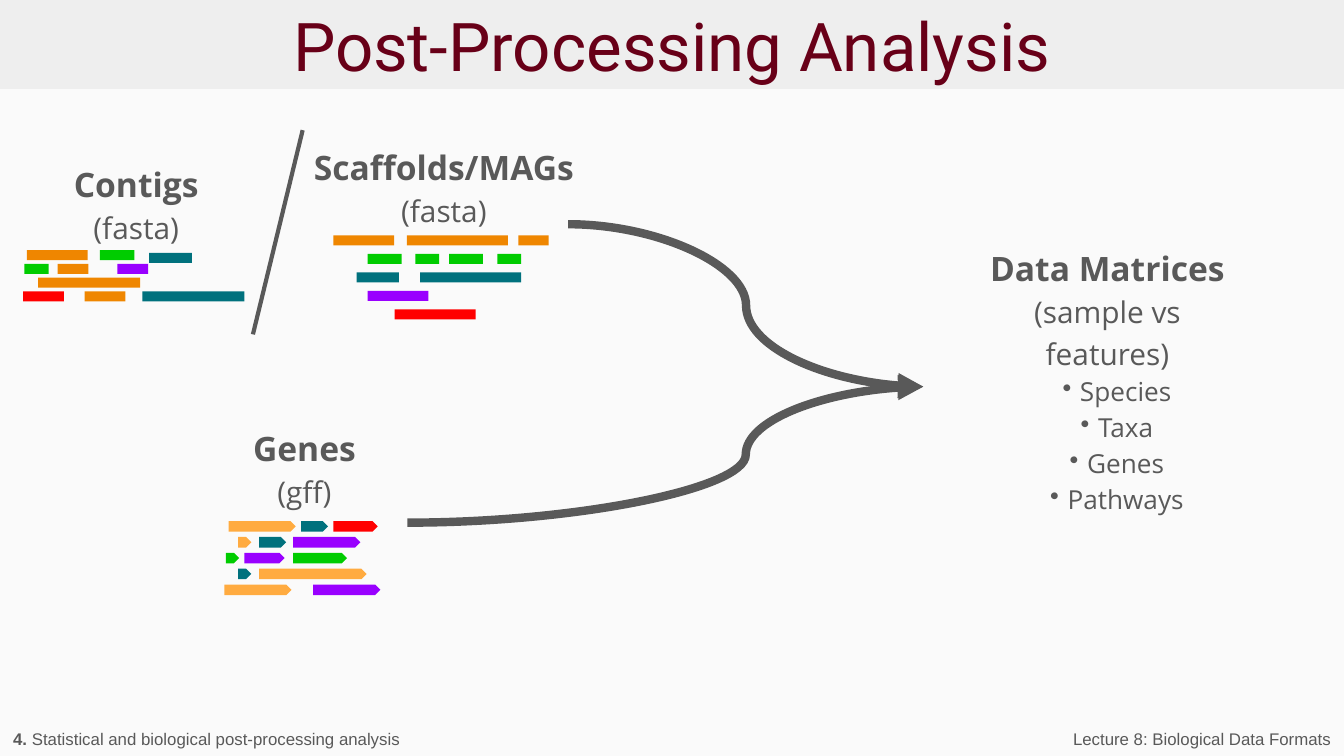
from dataclasses import dataclass

from lxml.etree import SubElement
from pptx import Presentation
from pptx.dml.color import RGBColor
from pptx.enum.shapes import MSO_CONNECTOR as Connector, MSO_SHAPE as Preset
from pptx.enum.text import MSO_ANCHOR as Anchor, PP_ALIGN as Align
from pptx.oxml.ns import qn
from pptx.util import Cm, Pt

GREY, MAROON = "595959", "680018"
ORANGE, AMBER, GREEN = "EF8600", "FFAB40", "00CC00"
TEAL, PURPLE, RED = "00717D", "9900FF", "FF0000"
WIDTH, HEIGHT = 25.4, 14.29


@dataclass
class Bar:
    left: float
    width: float
    color: str
    drop: float = 0


@dataclass
class Sequences:
    """A heading box (left, top, width) above evenly spaced rows of bars."""
    name: str
    file_format: str
    box: tuple[float, float, float]
    preset: Preset
    top: float
    pitch: float
    thickness: float
    rows: list[list[Bar]]


@dataclass
class Line:
    text: str
    size: float
    bold: bool = False
    bullet: bool = False


CONTIGS = Sequences("Contigs", "(fasta)", (0.25, 3.07, 4.55), Preset.RECTANGLE, 4.73, 0.26, 0.19, [
    [Bar(0.51, 1.15, ORANGE), Bar(1.89, 0.65, GREEN), Bar(2.82, 0.81, TEAL, 0.05)],
    [Bar(0.46, 0.46, GREEN), Bar(1.09, 0.58, ORANGE), Bar(2.22, 0.58, PURPLE)],
    [Bar(0.72, 1.93, ORANGE)],
    [Bar(0.44, 0.77, RED), Bar(1.6, 0.77, ORANGE), Bar(2.69, 1.93, TEAL)],
])
SCAFFOLDS = Sequences("Scaffolds/MAGs", "(fasta)", (5.51, 2.74, 5.66), Preset.RECTANGLE, 4.45, 0.35, 0.19, [
    [Bar(6.3, 1.15, ORANGE), Bar(7.69, 1.91, ORANGE), Bar(9.8, 0.57, ORANGE)],
    [Bar(6.95, 0.64, GREEN), Bar(7.85, 0.45, GREEN), Bar(8.49, 0.64, GREEN), Bar(9.4, 0.45, GREEN)],
    [Bar(6.74, 0.8, TEAL), Bar(7.94, 1.91, TEAL)],
    [Bar(6.95, 1.15, PURPLE)],
    [Bar(7.46, 1.53, RED)],
])
GENES = Sequences("Genes", "(gff)", (3.43, 8.05, 4.55), Preset.PENTAGON, 9.85, 0.3, 0.2, [
    [Bar(4.32, 1.27, AMBER), Bar(5.69, 0.51, TEAL), Bar(6.3, 0.84, RED)],
    [Bar(4.5, 0.25, AMBER), Bar(4.9, 0.51, TEAL), Bar(5.54, 1.27, PURPLE)],
    [Bar(4.27, 0.25, GREEN), Bar(4.62, 0.76, PURPLE), Bar(5.54, 1.02, GREEN)],
    [Bar(4.5, 0.25, TEAL), Bar(4.9, 2.03, AMBER)],
    [Bar(4.24, 1.27, AMBER), Bar(5.92, 1.27, PURPLE)],
])
MATRICES = [
    Line("Data Matrices", 18, bold=True),
    Line("(sample vs features)", 16),
    *(Line(feature, 14, bullet=True) for feature in ("Species", "Taxa", "Genes", "Pathways")),
]


def rgb(color: str) -> RGBColor:
    return RGBColor.from_string(color)


def set_font(font, name: str, size: float, color: str) -> None:
    font.name, font.size = name, Pt(size)
    font.color.rgb = rgb(color)


def set_frame(frame, anchor: Anchor, vertical_inset: float) -> None:
    frame.word_wrap = True
    frame.vertical_anchor = anchor
    frame.margin_left = frame.margin_right = Cm(0.25)
    frame.margin_top = frame.margin_bottom = Cm(vertical_inset)


def add_filled(slide, preset: Preset, left: float, top: float, width: float, height: float, color: str):
    shape = slide.shapes.add_shape(preset, Cm(left), Cm(top), Cm(width), Cm(height))
    shape.shadow.inherit = False
    shape.fill.solid()
    shape.fill.fore_color.rgb = rgb(color)
    shape.line.fill.background()
    return shape


def add_lines(slide, left: float, top: float, width: float, height: float, lines: list[Line]) -> None:
    frame = slide.shapes.add_textbox(Cm(left), Cm(top), Cm(width), Cm(height)).text_frame
    set_frame(frame, Anchor.MIDDLE, 0.25)
    for index, line in enumerate(lines):
        paragraph = frame.add_paragraph() if index else frame.paragraphs[0]
        paragraph.text = line.text
        paragraph.alignment = Align.CENTER
        paragraph.line_spacing = 1.15
        properties = paragraph._p.get_or_add_pPr()
        properties.set("marL", str(Cm(0.79 if line.bullet else 0.1)))
        properties.set("indent", str(Cm(-0.33 if line.bullet else 0)))
        if line.bullet:
            bullet_color = SubElement(properties, qn("a:buClr"))
            SubElement(bullet_color, qn("a:srgbClr"), val=GREY)
            SubElement(properties, qn("a:buChar"), char="•")
        set_font(paragraph.font, "Open Sans", line.size, GREY)
        paragraph.font.bold = line.bold


def add_sequences(slide, group: Sequences) -> None:
    add_lines(slide, *group.box, 1.5, [Line(group.name, 18, bold=True), Line(group.file_format, 16)])
    for index, row in enumerate(group.rows):
        for bar in row:
            top = group.top + index * group.pitch + bar.drop
            add_filled(slide, group.preset, bar.left, top, bar.width, group.thickness, bar.color)


def add_line(slide, kind: Connector, start: tuple[float, float], end: tuple[float, float], weight: float):
    line = slide.shapes.add_connector(kind, *(Cm(length) for length in (*start, *end)))
    line.line.color.rgb = rgb(GREY)
    line.line.width = Pt(weight)
    SubElement(line._element.spPr, qn("a:effectLst"))
    return line


def add_curve(slide, tip: tuple[float, float], tail: tuple[float, float], bend_x: float) -> None:
    """A curve that turns at bend_x, with its arrowhead at the tip."""
    curve = add_line(slide, Connector.CURVE, tip, tail, 4.5)
    SubElement(curve.line._get_or_add_ln(), qn("a:headEnd"), type="triangle")
    bend = round((tip[0] - bend_x) / (tip[0] - tail[0]) * 100000)
    guides = curve._element.spPr.find(qn("a:prstGeom")).get_or_add_avLst()
    SubElement(guides, qn("a:gd"), name="adj1", fmla=f"val {bend}")


def add_footer(slide, left: float, width: float, align: Align, runs: list[tuple[str, bool]]) -> None:
    frame = slide.shapes.add_textbox(Cm(left), Cm(13.66), Cm(width), Cm(0.63)).text_frame
    set_frame(frame, Anchor.BOTTOM, 0.13)
    paragraph = frame.paragraphs[0]
    paragraph.alignment = align
    set_font(paragraph.font, "Arial", 9, GREY)
    for text, bold in runs:
        run = paragraph.add_run()
        run.text, run.font.bold = text, bold


def main() -> None:
    presentation = Presentation()
    presentation.slide_width, presentation.slide_height = Cm(WIDTH), Cm(HEIGHT)
    slide = presentation.slides.add_slide(presentation.slide_layouts[6])
    slide.background.fill.solid()
    slide.background.fill.fore_color.rgb = rgb("FAFAFA")

    # Title band
    title = add_filled(slide, Preset.RECTANGLE, 0, 0, WIDTH, 1.68, "EEEEEE").text_frame
    set_frame(title, Anchor.MIDDLE, 0.25)
    title.text = "Post-Processing Analysis"
    title.paragraphs[0].alignment = Align.CENTER
    set_font(title.paragraphs[0].font, "Roboto", 36, MAROON)

    # Input sequences, with a slash between contigs and scaffolds
    for group in (GENES, CONTIGS, SCAFFOLDS):
        add_sequences(slide, group)
    add_line(slide, Connector.STRAIGHT, (5.72, 2.46), (4.78, 6.32), 2.25)

    # Curves joining at the data matrices
    for tail in ((10.74, 4.24), (7.7, 9.88)):
        add_curve(slide, (17.45, 7.31), tail, 14.1)
    add_lines(slide, 18.01, 4.8, 5.74, 4.72, MATRICES)

    # Footers
    add_footer(slide, 0, 13.97, Align.LEFT,
               [("4. ", True), ("Statistical and biological post-processing analysis", False)])
    add_footer(slide, 15.67, 9.73, Align.RIGHT, [("Lecture 8: Biological Data Formats", False)])

    presentation.save("out.pptx")


if __name__ == "__main__":
    main()
